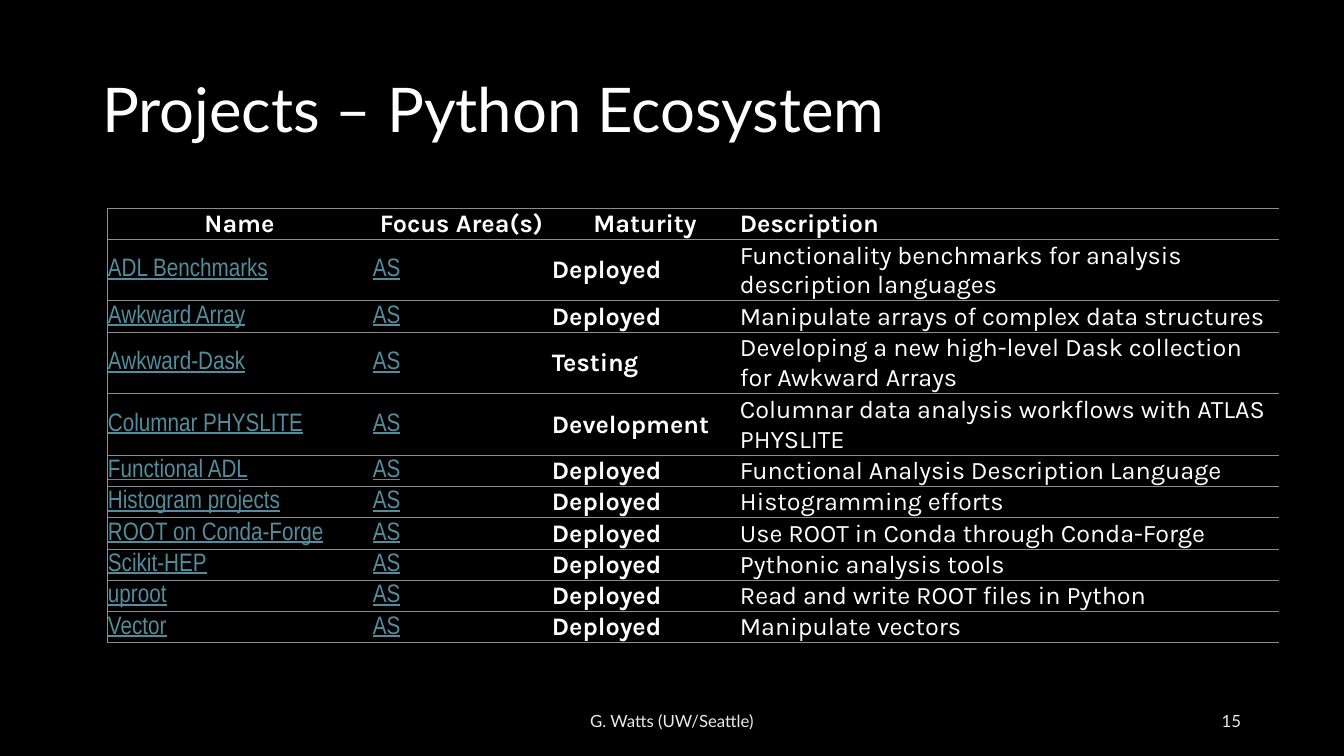
from dataclasses import dataclass

import lxml.etree
import pptx
import pptx.dml.color
import pptx.enum.text
import pptx.oxml.ns
import pptx.util

PX = 12192000 / 1344
COLORS = {
    "black": "000000",
    "white": "FFFFFF",
    "footer": "EAEAEA",
    "link": "538D9D",
    "orange": "E97132",
    "grey": "8C8C8C",
}
ALIGN = pptx.enum.text.PP_ALIGN
MIDDLE = pptx.enum.text.MSO_ANCHOR.MIDDLE
COL_WIDTHS = [265, 179, 188, 540]
ROW_HEIGHT = 28
HEADERS = ["Name", "Focus Area(s)", "Maturity", "Description"]


@dataclass
class Project:
    name: str
    description: str
    maturity: str = "Deployed"
    area: str = "AS"


@dataclass
class Style:
    font: str
    size: int
    color: str
    bold: bool = False
    underline: bool = False
    align: ALIGN = ALIGN.LEFT


@dataclass
class Label:
    text: str
    left: int
    width: int
    align: ALIGN


PROJECTS = [
    Project("ADL Benchmarks", "Functionality benchmarks for analysis description languages"),
    Project("Awkward Array", "Manipulate arrays of complex data structures"),
    Project("Awkward-Dask", "Developing a new high-level Dask collection for Awkward Arrays", "Testing"),
    Project("Columnar PHYSLITE", "Columnar data analysis workflows with ATLAS PHYSLITE", "Development"),
    Project("Functional ADL", "Functional Analysis Description Language"),
    Project("Histogram projects", "Histogramming efforts"),
    Project("ROOT on Conda-Forge", "Use ROOT in Conda through Conda-Forge"),
    Project("Scikit-HEP", "Pythonic analysis tools"),
    Project("uproot", "Read and write ROOT files in Python"),
    Project("Vector", "Manipulate vectors"),
]
LABELS = [
    Label("G. Watts (UW/Seattle)", 445, 454, ALIGN.CENTER),
    Label("15", 949, 302, ALIGN.RIGHT),
]

CENTERED_HEADER = Style("Karla", 18, "white", bold=True, align=ALIGN.CENTER)
HEADER = Style("Karla", 18, "white", bold=True)
LINK = Style("Arial Narrow", 18, "link", underline=True)
PLAIN = Style("Karla", 18, "white")
HEADER_STYLES = [CENTERED_HEADER] * 3 + [HEADER]
BODY_STYLES = [LINK, LINK, HEADER, PLAIN]


def px(n: int) -> pptx.util.Emu:
    return pptx.util.Emu(round(n * PX))


def rgb(name: str) -> pptx.dml.color.RGBColor:
    return pptx.dml.color.RGBColor.from_string(COLORS[name])


def write(tf, text: str, style: Style) -> None:
    tf.text = text
    p = tf.paragraphs[0]
    p.alignment = style.align
    p.font.name = style.font
    p.font.size = pptx.util.Pt(style.size)
    p.font.bold = style.bold
    p.font.underline = style.underline
    p.font.color.rgb = rgb(style.color)


def add_border(cell, side: str, color: str | None) -> None:
    qn = pptx.oxml.ns.qn
    tc_pr = cell._tc.get_or_add_tcPr()
    ln = lxml.etree.SubElement(tc_pr, qn(f"a:ln{side}"), w=str(pptx.util.Pt(0.5)))
    if color is None:
        lxml.etree.SubElement(ln, qn("a:noFill"))
    else:
        fill = lxml.etree.SubElement(ln, qn("a:solidFill"))
        lxml.etree.SubElement(fill, qn("a:srgbClr"), val=COLORS[color])


def fill_cell(cell, row: int, col: int, text: str, style: Style) -> None:
    cell.margin_left = cell.margin_right = cell.margin_top = px(1)
    cell.margin_bottom = px(0)
    cell.vertical_anchor = MIDDLE
    add_border(cell, "L", "orange" if col == 0 else None)
    add_border(cell, "R", None)
    add_border(cell, "T", "orange" if row == 1 else "grey")
    add_border(cell, "B", "orange" if row == 0 else "grey")
    cell.fill.solid()
    cell.fill.fore_color.rgb = rgb("black")
    write(cell.text_frame, text, style)


def add_title(s, text: str) -> None:
    sp = s.shapes.title
    sp.left, sp.top, sp.width, sp.height = px(92), px(40), px(1159), px(146)
    tf = sp.text_frame
    tf.vertical_anchor = MIDDLE
    write(tf, text, Style("Lato", 44, "white"))
    tf.paragraphs[0].line_spacing = 0.9


def add_label(s, label: Label) -> None:
    sp = s.shapes.add_textbox(px(label.left), px(701), px(label.width), px(40))
    tf = sp.text_frame
    tf.word_wrap = True
    tf.vertical_anchor = MIDDLE
    write(tf, label.text, Style("Lato", 12, "footer", align=label.align))


def add_projects(s) -> None:
    rows = [HEADERS] + [[p.name, p.area, p.maturity, p.description] for p in PROJECTS]
    frame = s.shapes.add_table(
        len(rows), len(HEADERS), px(107), px(208), px(sum(COL_WIDTHS)), px(ROW_HEIGHT * len(rows))
    )
    table = frame.table
    table.horz_banding = False
    for column, width in zip(table.columns, COL_WIDTHS):
        column.width = px(width)
    for i, texts in enumerate(rows):
        table.rows[i].height = px(ROW_HEIGHT)
        styles = BODY_STYLES if i else HEADER_STYLES
        for j, (text, style) in enumerate(zip(texts, styles)):
            fill_cell(table.cell(i, j), i, j, text, style)


def main() -> None:
    prs = pptx.Presentation()
    prs.slide_width, prs.slide_height = px(1344), px(756)
    s = prs.slides.add_slide(prs.slide_layouts[5])
    s.background.fill.solid()
    s.background.fill.fore_color.rgb = rgb("black")
    add_title(s, "Projects – Python Ecosystem")
    for label in LABELS:
        add_label(s, label)
    add_projects(s)
    prs.save("out.pptx")


if __name__ == "__main__":
    main()
